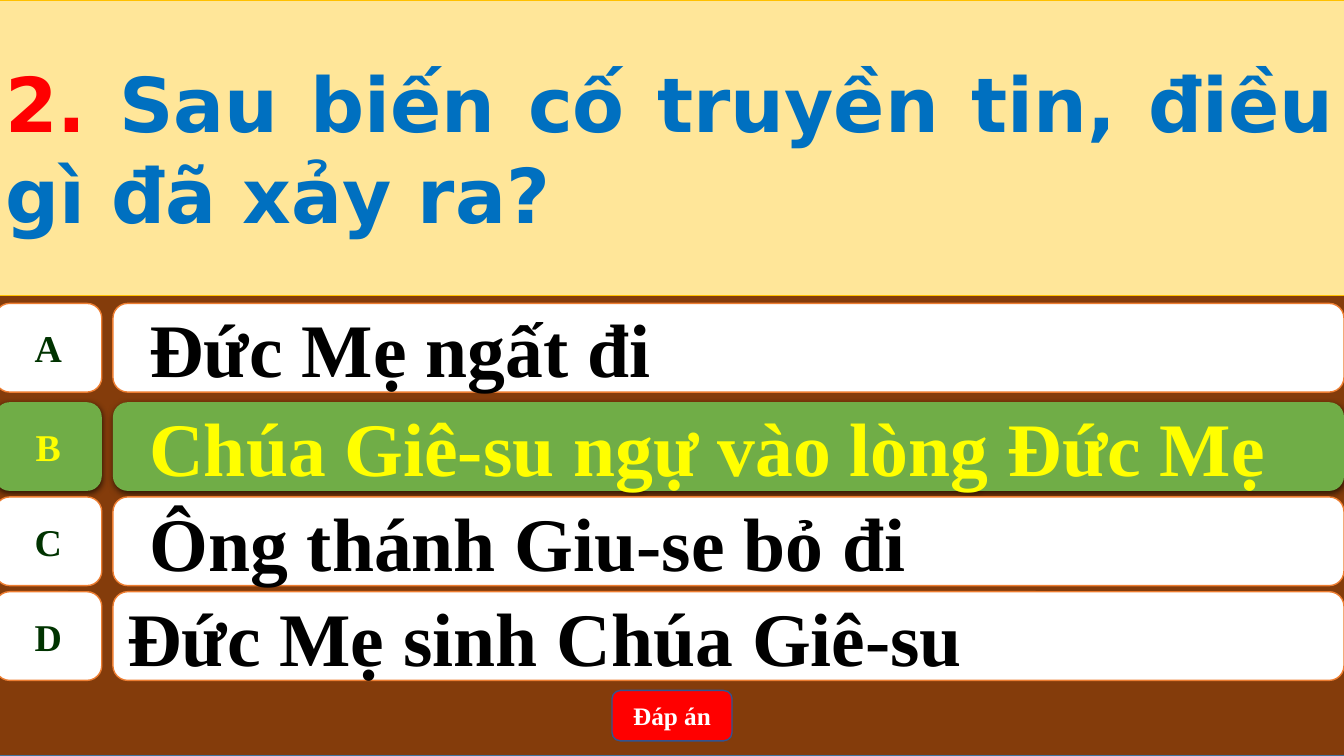
from dataclasses import dataclass

from lxml.etree import SubElement
from pptx import Presentation
from pptx.dml.color import RGBColor
from pptx.enum.shapes import MSO_SHAPE as Preset
from pptx.enum.text import MSO_ANCHOR as Anchor, MSO_AUTO_SIZE as AutoSize, PP_ALIGN as Align
from pptx.oxml.ns import qn
from pptx.shapes.autoshape import Shape
from pptx.slide import Slide
from pptx.text.text import _Paragraph as Paragraph
from pptx.util import Inches, Pt

COLOURS = {
    "brown": "843C0B",
    "frame": "43739E",
    "cream": "FFE699",
    "gold": "FFC000",
    "white": "FFFFFF",
    "orange": "ED7D31",
    "green": "70AD47",
    "yellow": "FFFF00",
    "forest": "003300",
    "black": "000000",
    "red": "FF0000",
    "navy": "325491",
    "blue": "0070C0",
}
SERIF = "Times New Roman"
SANS = "DejaVu Sans"
EDGE, FULL_WIDTH = -0.05, 13.39
ROW_HEIGHT = 0.88
FRAME_FORMAT = {"word_wrap": True, "auto_size": AutoSize.NONE, "vertical_anchor": Anchor.MIDDLE}


@dataclass(frozen=True)
class Box:
    left: float
    top: float
    width: float
    height: float


@dataclass(frozen=True)
class Answer:
    letter: str
    wording: str
    top: float
    indented: bool = True
    correct: bool = False


ANSWERS = [
    Answer("A", "Đức Mẹ ngất đi", 3.01),
    Answer("B", "Chúa Giê-su ngự vào lòng Đức Mẹ", 3.99, correct=True),
    Answer("C", "Ông thánh Giu-se bỏ đi", 4.93),
    Answer("D", "Đức Mẹ sinh Chúa Giê-su", 5.87, indented=False),
]


def rgb(colour: str) -> RGBColor:
    return RGBColor.from_string(COLOURS[colour])


def paint(shape: Shape, fill: str, line: str | None, width: float = 1) -> None:
    shape.fill.solid()
    shape.fill.fore_color.rgb = rgb(fill)
    if line is None:
        shape.line.fill.background()
    else:
        shape.line.color.rgb = rgb(line)
        shape.line.width = Pt(width)


def add_panel(slide: Slide, preset: Preset, box: Box, fill: str, line: str | None) -> Shape:
    panel = slide.shapes.add_shape(
        preset, Inches(box.left), Inches(box.top), Inches(box.width), Inches(box.height))
    panel.shadow.inherit = False
    paint(panel, fill, line)
    return panel


def add_words(paragraph: Paragraph, words: str, size: float, font: str, colour: str) -> None:
    run = paragraph.add_run()
    run.text = words
    for name, value in {"size": Pt(size), "name": font, "bold": True}.items():
        setattr(run.font, name, value)
    run.font.color.rgb = rgb(colour)


def start_text(shape: Shape, align: Align, wrap: bool = True) -> Paragraph:
    for name, value in (FRAME_FORMAT | {"word_wrap": wrap}).items():
        setattr(shape.text_frame, name, value)
    paragraph = shape.text_frame.paragraphs[0]
    paragraph.alignment = align
    return paragraph


def add_shadow(shape: Shape) -> None:
    effects = shape._element.spPr.find(qn("a:effectLst"))
    shadow = SubElement(effects, qn("a:outerShdw"), blurRad=str(Pt(4.5)), dist=str(Pt(1.5)),
                        dir="5400000", algn="ctr", rotWithShape="0")
    tint = SubElement(shadow, qn("a:srgbClr"), val=COLOURS["black"])
    SubElement(tint, qn("a:alpha"), val="63000")


def add_answer(slide: Slide, answer: Answer) -> None:
    fill, line = ("green", None) if answer.correct else ("white", "orange")
    letter_colour, wording_colour = ("yellow",) * 2 if answer.correct else ("forest", "black")

    wording_bar = add_panel(slide, Preset.ROUNDED_RECTANGLE,
                            Box(1.12, answer.top, 12.21, ROW_HEIGHT), fill, line)
    letter_tile = add_panel(slide, Preset.FLOWCHART_ALTERNATE_PROCESS,
                            Box(EDGE, answer.top, 1.06, ROW_HEIGHT), fill, line)
    if answer.correct:
        add_shadow(wording_bar)
        add_shadow(letter_tile)

    wording = start_text(wording_bar, Align.LEFT)
    if answer.indented:
        wording.level = 1
        properties = wording._p.get_or_add_pPr()
        for name, value in {"marL": 0.5, "indent": -0.28}.items():
            properties.set(name, str(Inches(value)))
    add_words(wording, answer.wording, 54, SERIF, wording_colour)
    add_words(start_text(letter_tile, Align.CENTER, wrap=False),
              answer.letter, 27, SERIF, letter_colour)


def add_question(slide: Slide) -> None:
    question = slide.shapes.title
    position = {"left": EDGE, "top": 0, "width": FULL_WIDTH, "height": 2.93}
    for name, value in position.items():
        setattr(question, name, Inches(value))
    paint(question, "cream", "gold", 0.5)
    paragraph = start_text(question, Align.JUSTIFY)
    add_words(paragraph, "2. ", 54, SANS, "red")
    add_words(paragraph, "Sau biến cố truyền tin, điều gì đã xảy ra?", 54, SANS, "blue")
    slide.shapes._spTree.append(question._element)


def main() -> None:
    deck = Presentation()
    deck.slide_width, deck.slide_height = Inches(13.33), Inches(7.5)
    slide = deck.slides.add_slide(deck.slide_layouts[5])

    add_panel(slide, Preset.RECTANGLE, Box(EDGE, 0, FULL_WIDTH, 7.5), "brown", "frame")
    for answer in ANSWERS:
        add_answer(slide, answer)
    reveal_button = add_panel(slide, Preset.ROUNDED_RECTANGLE,
                              Box(6.07, 6.85, 1.19, 0.5), "red", "navy")
    add_words(start_text(reveal_button, Align.CENTER), "Đáp án", 18, SERIF, "white")
    add_question(slide)

    deck.save("out.pptx")


if __name__ == "__main__":
    main()
